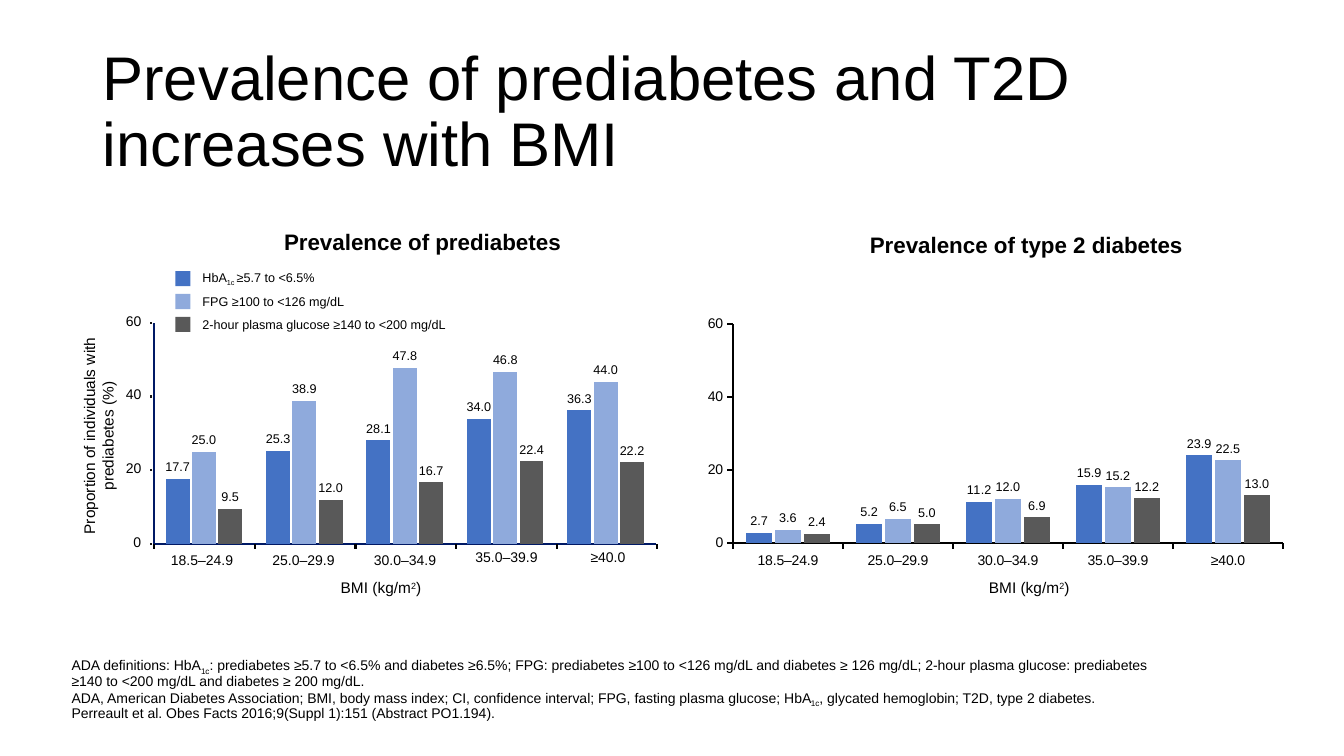
from lxml.etree import SubElement
from pptx import Presentation
from pptx.chart.data import CategoryChartData
from pptx.dml.color import RGBColor
from pptx.enum.chart import XL_CHART_TYPE as ChartType
from pptx.enum.chart import XL_LABEL_POSITION as LabelPosition
from pptx.enum.chart import XL_TICK_LABEL_POSITION as TickLabels
from pptx.enum.chart import XL_TICK_MARK as TickMark
from pptx.enum.shapes import MSO_CONNECTOR as Connector
from pptx.enum.shapes import MSO_SHAPE as Shape
from pptx.enum.text import MSO_ANCHOR as Anchor
from pptx.enum.text import MSO_AUTO_SIZE as AutoSize
from pptx.enum.text import PP_ALIGN as Align
from pptx.oxml import parse_xml
from pptx.oxml.ns import nsdecls, qn
from pptx.util import Pt

BLACK = RGBColor(0x00, 0x00, 0x00)
INK = RGBColor(0x18, 0x17, 0x17)
NAVY = RGBColor(0x00, 0x19, 0x65)
BLUE = RGBColor(0x44, 0x72, 0xC4)
LIGHT_BLUE = RGBColor(0x8F, 0xAA, 0xDC)
GRAY = RGBColor(0x59, 0x59, 0x59)
SERIES_COLORS = [BLUE, LIGHT_BLUE, GRAY]

BMI_RANGES = ["18.5–24.9", "25.0–29.9", "30.0–34.9", "35.0–39.9", "≥40.0"]
PREDIABETES = [
    [17.7, 25.3, 28.1, 34.0, 36.3],
    [25.0, 38.9, 47.8, 46.8, 44.0],
    [9.5, 12.0, 16.7, 22.4, 22.2],
]
TYPE_2_DIABETES = [
    [2.7, 5.2, 11.2, 15.9, 23.9],
    [3.6, 6.5, 12.0, 15.2, 22.5],
    [2.4, 5.0, 6.9, 12.2, 13.0],
]
LEGEND = [
    ([("HbA", 0), ("1c ", -25), ("≥5.7 to <6.5%", 0)], 101.5, False),
    ([("FPG ≥100 to <126 mg/dL", 0)], 116.6, False),
    ([("2-hour plasma glucose ≥140 to <200 mg/dL", 0)], 213.8, True),
]
BMI_TITLE = [("BMI (kg/m", 0), ("2", 30), (")", 0)]
FOOTNOTE = [
    ("ADA definitions: HbA", 0),
    ("1c", -25),
    (": prediabetes ≥5.7 to <6.5% and diabetes ≥6.5%; FPG: prediabetes ≥100 to <126 mg/dL "
     "and diabetes ≥ 126 mg/dL; 2-hour plasma glucose: prediabetes \n"
     "≥140 to <200 mg/dL and diabetes ≥ 200 mg/dL.\n"
     "ADA, American Diabetes Association; BMI, body mass index; CI, confidence interval; "
     "FPG, fasting plasma glucose; HbA", 0),
    ("1c", -25),
    (", glycated hemoglobin; T2D, type 2 diabetes.\n"
     "Perreault et al. Obes Facts 2016;9(Suppl 1):151 (Abstract PO1.194).", 0),
]


def apply(target, values):
    for name, value in values.items():
        setattr(target, name, value)


class SlideBuilder:
    font_name = "Arial"
    line_width = Pt(1.5)

    def __init__(self, slide):
        self.slide = slide
        self.shapes = slide.shapes

    def place(self, shape, box):
        apply(shape, dict(zip(("left", "top", "width", "height"), map(Pt, box))))

    def style_font(self, font, size, bold=False):
        apply(font, {"name": self.font_name, "size": Pt(size), "bold": bold})
        font.color.rgb = BLACK

    def title(self, text, box):
        title = self.shapes.title
        self.place(title, box)
        frame = title.text_frame
        apply(frame, {"text": text, "word_wrap": True, "auto_size": AutoSize.NONE,
                      "vertical_anchor": Anchor.MIDDLE})
        paragraph = frame.paragraphs[0]
        apply(paragraph, {"alignment": Align.LEFT, "line_spacing": 0.9})
        self.style_font(paragraph.runs[0].font, 44)

    def text(self, parts, box, size, align=Align.LEFT, bold=False, wrap=True,
             anchor=Anchor.TOP, grow=True, spacing=None, margins=None, vertical=None):
        frame = self.shapes.add_textbox(*map(Pt, box)).text_frame
        apply(frame, {"word_wrap": wrap, "vertical_anchor": anchor,
                      "auto_size": AutoSize.SHAPE_TO_FIT_TEXT if grow else AutoSize.NONE})
        apply(frame, margins or {})
        if vertical:
            frame._txBody.bodyPr.set("vert", vertical)
        paragraph = frame.paragraphs[0]
        apply(paragraph, {"alignment": align, "line_spacing": spacing})
        for content, baseline in parts:
            for number, line in enumerate(content.split("\n")):
                if number:
                    paragraph.add_line_break()
                run = paragraph.add_run()
                run.text = line
                self.style_font(run.font, size, bold)
                if baseline:
                    run._r.get_or_add_rPr().set("baseline", str(baseline * 1000))

    def line(self, start, end, color):
        connector = self.shapes.add_connector(Connector.STRAIGHT, *map(Pt, start + end))
        connector.line.color.rgb = color
        connector.line.width = self.line_width
        SubElement(connector._element.spPr, qn("a:effectLst"))

    def square(self, left, top, side, color):
        shape = self.shapes.add_shape(Shape.RECTANGLE, *map(Pt, (left, top, side, side)))
        shape.shadow.inherit = False
        shape.fill.solid()
        shape.fill.fore_color.rgb = color
        shape.line.fill.background()

    def style_axis(self, axis, color, labelled):
        apply(axis, {
            "has_major_gridlines": False,
            "minor_tick_mark": TickMark.NONE,
            "major_tick_mark": TickMark.OUTSIDE if labelled else TickMark.NONE,
            "tick_label_position": TickLabels.NEXT_TO_AXIS if labelled else TickLabels.NONE,
        })
        self.style_font(axis.tick_labels.font, 10)
        axis.format.line.color.rgb = color
        axis.format.line.width = self.line_width

    def chart(self, rows, box, plot_box, axis_color, labelled):
        data = CategoryChartData()
        data.categories = BMI_RANGES
        for number, row in enumerate(rows, 1):
            data.add_series(f"Series {number}", row)
        chart = self.shapes.add_chart(ChartType.COLUMN_CLUSTERED, *map(Pt, box), data).chart
        apply(chart, {"has_title": False, "has_legend": False})
        self.style_font(chart.font, 10)
        self.style_axis(chart.category_axis, axis_color, labelled)
        self.style_axis(chart.value_axis, axis_color, labelled)
        apply(chart.value_axis, {"minimum_scale": 0, "maximum_scale": 60, "major_unit": 20})
        apply(chart.value_axis.tick_labels,
              {"number_format": "#,##0", "number_format_is_linked": False})
        plot = chart.plots[0]
        apply(plot, {"gap_width": 100, "overlap": -10, "vary_by_categories": False})
        for series, color in zip(plot.series, SERIES_COLORS):
            series.format.fill.solid()
            series.format.fill.fore_color.rgb = color
            apply(series.data_labels, {
                "show_value": True, "position": LabelPosition.OUTSIDE_END,
                "number_format": "0.0", "number_format_is_linked": False})
            self.style_font(series.data_labels.font, 9)
        self.lay_out_plot(chart, plot_box)

    def lay_out_plot(self, chart, plot_box):
        area = chart._chartSpace.chart.plotArea
        for layout in area.findall(qn("c:layout")):
            area.remove(layout)
        settings = [("layoutTarget", "inner"), ("xMode", "edge"), ("yMode", "edge")]
        settings += zip("xywh", plot_box)
        inner = "".join(f'<c:{name} val="{value}"/>' for name, value in settings)
        area.insert(0, parse_xml(
            f'<c:layout {nsdecls("c")}><c:manualLayout>{inner}</c:manualLayout></c:layout>'))


def main():
    presentation = Presentation()
    apply(presentation, {"slide_width": Pt(960), "slide_height": Pt(540)})
    builder = SlideBuilder(presentation.slides.add_slide(presentation.slide_layouts[5]))

    builder.title("Prevalence of prediabetes and T2D increases with BMI", (66, 28.75, 828, 104.4))
    no_margins = dict.fromkeys(("margin_left", "margin_top", "margin_right", "margin_bottom"), 0)
    builder.text(FOOTNOTE, (51.1, 494, 843, 21.6), 10, anchor=Anchor.BOTTOM, grow=False,
                 spacing=0.9, margins=no_margins)

    builder.chart(PREDIABETES, (42.5, 192.2, 437, 240.5), (0.154, 0.16, 0.821, 0.657),
                  NAVY, False)
    builder.chart(TYPE_2_DIABETES, (434.2, 193, 580.3, 238.3), (0.154, 0.16, 0.677, 0.657),
                  BLACK, True)
    for heading, box in (("Prevalence of prediabetes", (195.8, 159.1, 214.6, 26.6)),
                         ("Prevalence of type 2 diabetes", (614.2, 161.3, 241.2, 26.6))):
        builder.text([(heading, 0)], box, 16, bold=True, wrap=False)
    for left in (191.5, 654.5):
        builder.text(BMI_TITLE, (left, 409.7, 161.3, 20.9), 11, Align.CENTER)

    builder.text([("Proportion of individuals with prediabetes (%)", 0)],
                 (49.7, 231.8, 41, 159.1), 11, Align.CENTER, anchor=Anchor.MIDDLE,
                 vertical="vert270")
    for step in range(4):
        label = str(20 * step)
        width = 14.8 + 5.6 * len(label)
        builder.text([(label, 0)], (108 - width, 377.3 - 52.6 * step, width, 19.4), 10,
                     Align.RIGHT, wrap=False)
        tick_top = 388.8 - 52.8 * step
        builder.line((108.7, tick_top), (107.3, tick_top), INK)

    side_margins = {"margin_left": 0, "margin_right": 0}
    for column, bmi_range in enumerate(BMI_RANGES):
        top = 390.2 if column < 3 else 388.1
        builder.text([(bmi_range, 0)], (113 + 72.5 * column, top, 62.6, 19.4), 10,
                     Align.CENTER, margins=side_margins)
    for boundary in range(len(BMI_RANGES) + 1):
        left = 110.2 + 71.85 * boundary
        builder.line((left, 388.8), (left, 392.4), BLACK)

    for row, ((parts, width, wrap), color) in enumerate(zip(LEGEND, SERIES_COLORS)):
        offset = 16.3 * row
        builder.square(125.3, 193.7 + offset, 10.8, color)
        builder.text(parts, (137.5, 190.1 + offset, width, 18), 9, wrap=wrap,
                     anchor=Anchor.MIDDLE)

    presentation.save("out.pptx")


if __name__ == "__main__":
    main()
